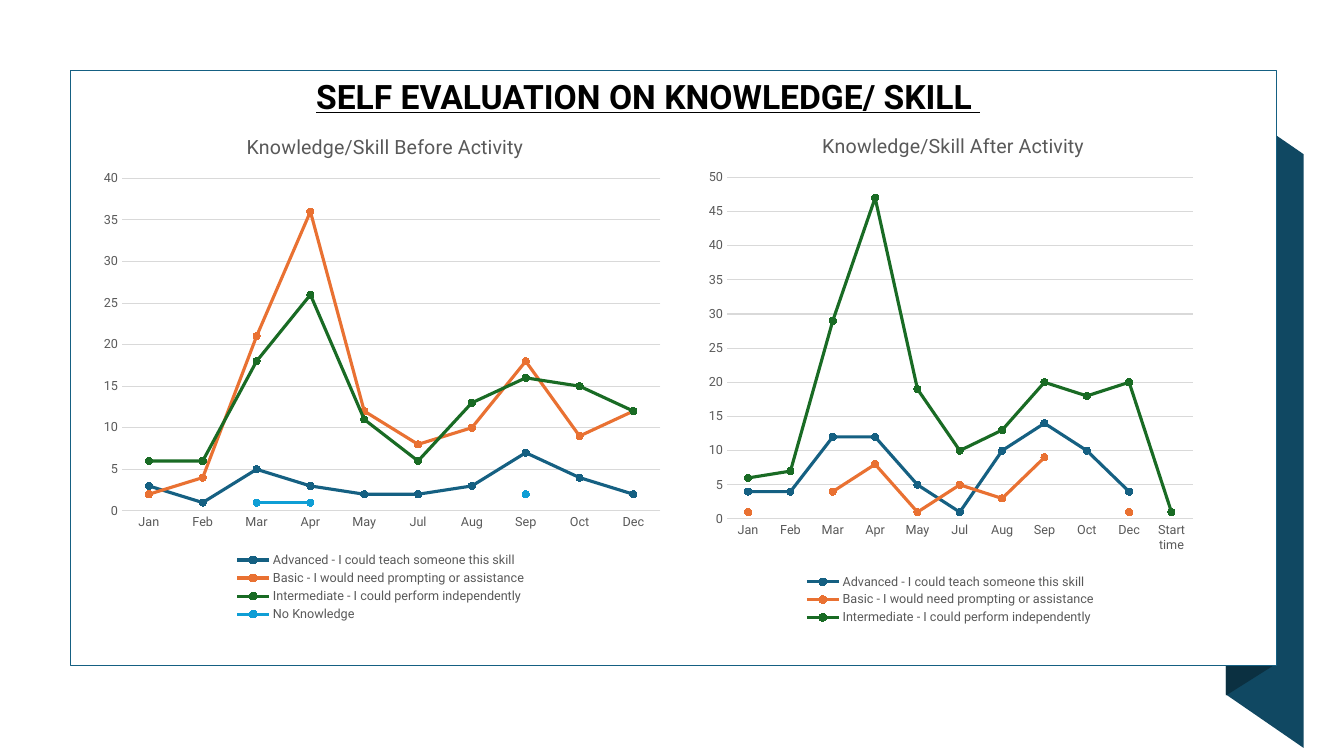
from lxml import etree
from pptx import Presentation
from pptx.chart.data import CategoryChartData
from pptx.dml.color import RGBColor
from pptx.enum import chart as ch, shapes, text
from pptx.oxml import ns
from pptx.util import Inches, Pt

FONT = "Roboto"
COLORS = {
    "white": "FFFFFF", "black": "000000", "ribbon": "104862", "fold": "0B3041",
    "label": "595959", "grid": "D9D9D9",
    "advanced": "156082", "basic": "E97132", "intermediate": "196B24", "none": "0F9ED5",
}
LEVELS = {
    "advanced": "Advanced - I could teach someone this skill",
    "basic": "Basic - I would need prompting or assistance",
    "intermediate": "Intermediate - I could perform independently",
    "none": "No Knowledge",
}
MONTHS = ["Jan", "Feb", "Mar", "Apr", "May", "Jul", "Aug", "Sep", "Oct", "Dec"]
BEFORE = {
    "advanced": [3, 1, 5, 3, 2, 2, 3, 7, 4, 2],
    "basic": [2, 4, 21, 36, 12, 8, 10, 18, 9, 12],
    "intermediate": [6, 6, 18, 26, 11, 6, 13, 16, 15, 12],
    "none": [None, None, 1, 1, None, None, None, 2, None, None],
}
AFTER = {
    "advanced": [4, 4, 12, 12, 5, 1, 10, 14, 10, 4, None],
    "basic": [1, None, 4, 8, 1, 5, 3, 9, None, 1, None],
    "intermediate": [6, 7, 29, 47, 19, 10, 13, 20, 18, 20, 1],
}


def rgb(name):
    return RGBColor.from_string(COLORS[name])


def set_font(font, size, color):
    font.name, font.size = FONT, Pt(size)
    font.color.rgb = rgb(color)


def set_line(line, color, width):
    line.color.rgb = rgb(color)
    line.width = Pt(width)


def add_ribbon_part(slide, points, color):
    corners = [(Inches(x), Inches(y)) for x, y in points]
    builder = slide.shapes.build_freeform(*corners[0])
    builder.add_line_segments(corners[1:], close=True)
    part = builder.convert_to_shape()
    part.shadow.inherit = False
    part.fill.solid()
    part.fill.fore_color.rgb = rgb(color)
    part.line.fill.background()


def add_panel(slide):
    panel = slide.shapes.add_shape(shapes.MSO_SHAPE.RECTANGLE, Inches(0.7), Inches(0.7),
                                   Inches(11.96), Inches(5.9))
    panel.shadow.inherit = False
    panel.fill.solid()
    panel.fill.fore_color.rgb = rgb("white")
    set_line(panel.line, "advanced", 1)


def place_title(slide, wording):
    """Format the title placeholder and bring it in front of the panel."""
    title = slide.shapes.title
    title.left, title.top = Inches(2.88), Inches(0.7)
    title.width, title.height = Inches(7.1), Inches(0.5)
    frame = title.text_frame
    frame.text = wording
    frame.word_wrap = True
    frame.auto_size = text.MSO_AUTO_SIZE.NONE
    frame.vertical_anchor = text.MSO_ANCHOR.MIDDLE
    paragraph = frame.paragraphs[0]
    paragraph.alignment = text.PP_ALIGN.CENTER
    font = paragraph.runs[0].font
    set_font(font, 24, "black")
    font.bold = font.underline = True
    slide.shapes._spTree.append(title._element)


def set_layout(part, index, frame, box, inner=False):
    """Fix a chart part at box, given in slide inches; a box of two places only the corner."""
    for old in part.findall(ns.qn("c:layout")):
        part.remove(old)
    layout = etree.Element(ns.qn("c:layout"))
    manual = etree.SubElement(layout, ns.qn("c:manualLayout"))
    left, top, width, height = frame
    fractions = [(box[0] - left) / width, (box[1] - top) / height]
    if len(box) == 4:
        fractions += [box[2] / width, box[3] / height]
    settings = [("layoutTarget", "inner")] if inner else []
    settings += [("xMode", "edge"), ("yMode", "edge")]
    settings += [(key, f"{value:.4f}") for key, value in zip("xywh", fractions)]
    for key, value in settings:
        etree.SubElement(manual, ns.qn(f"c:{key}")).set("val", value)
    part.insert(index, layout)


def style_axes(chart, maximum):
    for axis in (chart.category_axis, chart.value_axis):
        axis.major_tick_mark = axis.minor_tick_mark = ch.XL_TICK_MARK.NONE
        set_font(axis.tick_labels.font, 9, "label")
    set_line(chart.category_axis.format.line, "grid", 0.75)
    values = chart.value_axis
    values.format.line.fill.background()
    values.minimum_scale, values.maximum_scale, values.major_unit = 0, maximum, 5
    values.has_major_gridlines = True
    set_line(values.major_gridlines.format.line, "grid", 0.75)


def style_series(series, color):
    series.smooth = False
    set_line(series.format.line, color, 2.25)
    marker = series.marker
    marker.style, marker.size = ch.XL_MARKER_STYLE.CIRCLE, 5
    marker.format.fill.solid()
    marker.format.fill.fore_color.rgb = rgb(color)
    set_line(marker.format.line, color, 0.75)


def add_skill_chart(slide, heading, months, scores, maximum, frame,
                    heading_at, plot_box, legend_box):
    data = CategoryChartData()
    data.categories = months
    for level, values in scores.items():
        data.add_series(LEVELS[level], values)
    chart = slide.shapes.add_chart(ch.XL_CHART_TYPE.LINE_MARKERS,
                                   *(Inches(length) for length in frame), data).chart
    set_font(chart.font, 10, "black")
    chart.plots[0].vary_by_categories = False
    style_axes(chart, maximum)
    for series, level in zip(chart.plots[0].series, scores):
        style_series(series, level)

    chart.has_title = True
    heading_frame = chart.chart_title.text_frame
    heading_frame.text = heading
    heading_font = heading_frame.paragraphs[0].runs[0].font
    set_font(heading_font, 14, "label")
    heading_font.bold = False
    chart.chart_title.include_in_layout = False

    chart.has_legend = True
    chart.legend.position = ch.XL_LEGEND_POSITION.BOTTOM
    chart.legend.include_in_layout = False
    set_font(chart.legend.font, 9, "label")

    root = chart._chartSpace
    set_layout(root.find(".//" + ns.qn("c:title")), 1, frame, heading_at)
    set_layout(root.find(".//" + ns.qn("c:plotArea")), 0, frame, plot_box, inner=True)
    set_layout(root.find(".//" + ns.qn("c:legend")), 1, frame, legend_box)


def main():
    deck = Presentation()
    deck.slide_width, deck.slide_height = Inches(13.33), Inches(7.5)
    slide = deck.slides.add_slide(deck.slide_layouts[5])
    add_ribbon_part(slide, [(12.93, 7.42), (12.16, 6.89), (12.16, 1), (12.93, 1.53)], "ribbon")
    add_ribbon_part(slide, [(12.62, 6.61), (12.16, 6.9), (12.16, 1), (12.62, 0.7)], "fold")
    add_panel(slide)
    place_title(slide, "SELF EVALUATION ON KNOWLEDGE/ SKILL ")
    add_skill_chart(slide, "Knowledge/Skill Before Activity", MONTHS, BEFORE, 40,
                    frame=(0.91, 1.08, 5.75, 5.14), heading_at=(2.41, 1.29),
                    plot_box=(1.21, 1.77, 5.34, 3.3), legend_box=(2.3, 5.45, 2.95, 0.75))
    add_skill_chart(slide, "Knowledge/Skill After Activity", MONTHS + ["Start time"], AFTER, 50,
                    frame=(6.93, 1.07, 5, 5.18), heading_at=(8.12, 1.28),
                    plot_box=(7.21, 1.76, 4.62, 3.39), legend_box=(7.95, 5.67, 2.95, 0.56))
    deck.save("out.pptx")


if __name__ == "__main__":
    main()
